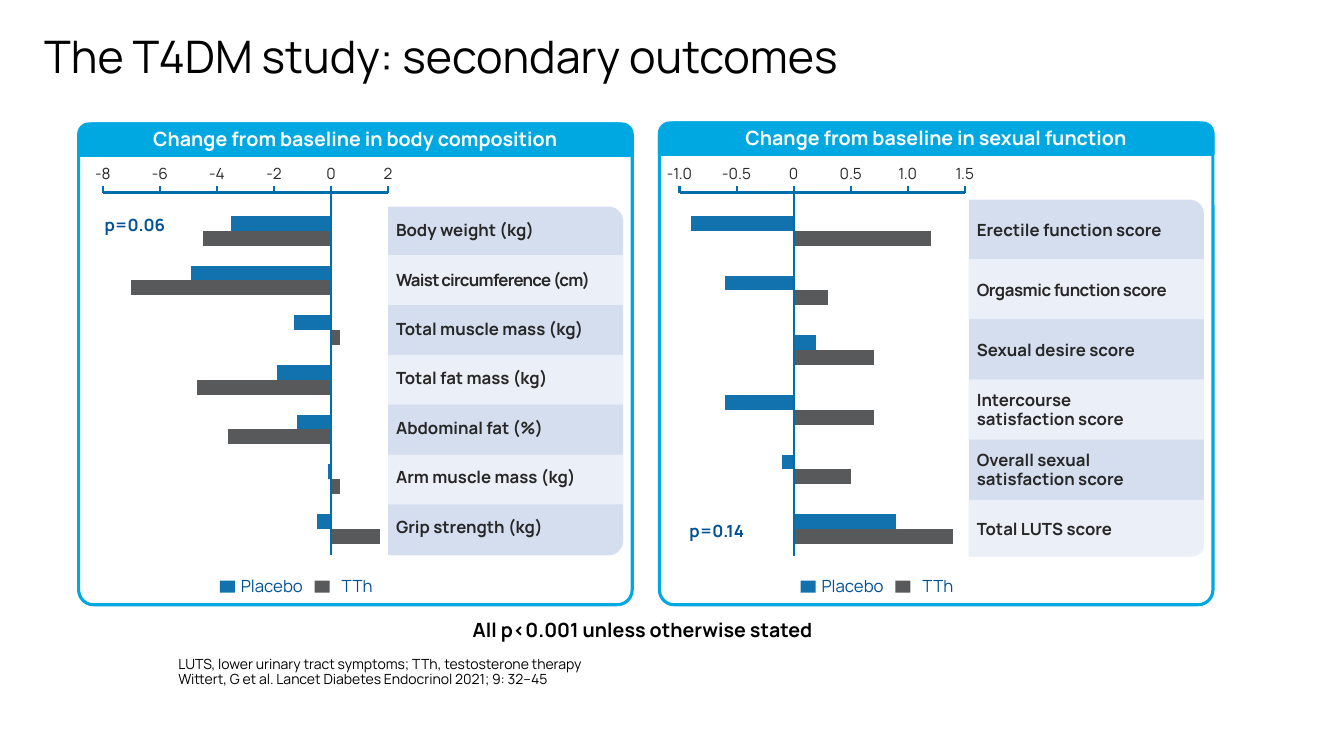
from dataclasses import dataclass

from lxml import etree
from pptx import Presentation
from pptx.chart.data import CategoryChartData
from pptx.dml.color import RGBColor
from pptx.enum.chart import XL_CHART_TYPE
from pptx.enum.shapes import MSO_CONNECTOR, MSO_SHAPE
from pptx.enum.text import MSO_ANCHOR, PP_ALIGN
from pptx.oxml.ns import qn
from pptx.util import Inches, Pt

BARS = XL_CHART_TYPE.BAR_CLUSTERED
STRAIGHT = MSO_CONNECTOR.STRAIGHT
RECTANGLE = MSO_SHAPE.RECTANGLE
ROUNDED = MSO_SHAPE.ROUNDED_RECTANGLE
ONE_ROUND = MSO_SHAPE.ROUND_1_RECTANGLE
TWO_ROUND = MSO_SHAPE.ROUND_2_SAME_RECTANGLE
TOP, MIDDLE, BOTTOM = MSO_ANCHOR.TOP, MSO_ANCHOR.MIDDLE, MSO_ANCHOR.BOTTOM
LEFT, CENTER = PP_ALIGN.LEFT, PP_ALIGN.CENTER

FONT = "Manrope"
COLORS = {
    "black": "000000", "white": "FFFFFF", "frame": "00A8E1", "axis": "006EAB",
    "placebo": "1272AE", "therapy": "58595B", "band": "D5DEEF", "stripe": "EBEFF7",
    "label": "272727", "note": "005294",
}
PANEL_WIDTH, PANEL_BOTTOM, HEADER_HEIGHT = 5.49, 6.0, 0.31
AXIS_WIDTH, AXIS_TOP, TICK_LENGTH = 2.83, 1.91, 0.06
BAND_OFFSET, BAND_WIDTH = 3.07, 2.33
BAR_HEIGHT, FIRST_ROW = 0.1475, 2.29


@dataclass(frozen=True)
class Outcome:
    label: str
    placebo: float
    therapy: float
    tracking: int = 0


@dataclass(frozen=True)
class Panel:
    title: str
    left: float
    top: float
    axis_left: float
    ticks: tuple[str, ...]
    bar_step: float
    band_top: float
    band_bottom: float
    stripe_top: float
    stripe_height: float
    label_step: float
    line_spacing: float
    p_value: str
    p_left: float
    p_top: float
    outcomes: tuple[Outcome, ...]


PANELS = (
    Panel("Change from baseline in sexual function", 6.54, 1.22, 6.74,
          ("-1.0", "-0.5", "0", "0.5", "1.0", "1.5"),
          0.592, 1.98, 5.52, 2.57, 0.597, 0.593, 0.95, "p=0.14", 6.74, 5.12, (
              Outcome("Erectile function score", -0.9, 1.2),
              Outcome("Orgasmic function score", -0.6, 0.3, -30),
              Outcome("Sexual desire score", 0.2, 0.7),
              Outcome("Intercourse\vsatisfaction score", -0.6, 0.7),
              Outcome("Overall sexual\vsatisfaction score", -0.1, 0.5),
              Outcome("Total LUTS score", 0.9, 1.4))),
    Panel("Change from baseline in body composition", 0.78, 1.23, 1.02,
          ("-8", "-6", "-4", "-2", "0", "2"),
          0.493, 2.05, 5.51, 2.53, 0.495, 0.49, 0.99, "p=0.06", 0.94, 2.08, (
              Outcome("Body weight (kg)", -3.5, -4.5),
              Outcome("Waist circumference (cm)", -4.9, -7.0, -50),
              Outcome("Total muscle mass (kg)", -1.3, 0.3),
              Outcome("Total fat mass (kg)", -1.9, -4.7),
              Outcome("Abdominal fat (%)", -1.2, -3.6),
              Outcome("Arm muscle mass (kg)", -0.1, 0.3),
              Outcome("Grip strength (kg)", -0.5, 1.7))),
)


def color(name: str) -> RGBColor:
    return RGBColor.from_string(COLORS[name])


def write(box, lines: list[str], size: float, ink: str, bold=False, align=LEFT,
          anchor=TOP, spacing=1.0, tracking=0, tab=0.0, wrap=True) -> None:
    frame = box.text_frame
    frame.word_wrap = wrap
    frame.vertical_anchor = anchor
    for index, line in enumerate(lines):
        para = frame.add_paragraph() if index else frame.paragraphs[0]
        para.text = line
        para.alignment = align
        para.line_spacing = spacing
        if tab:
            tabs = etree.SubElement(para._p.get_or_add_pPr(), qn("a:tabLst"))
            etree.SubElement(tabs, qn("a:tab"), pos=str(Inches(tab)), algn="l")
        para.font.name, para.font.size, para.font.bold = FONT, Pt(size), bold
        para.font.color.rgb = color(ink)
        if tracking:
            for span in para.runs:
                span._r.get_or_add_rPr().set("spc", str(tracking))


def add_text(page, left: float, top: float, width: float, height: float,
             lines: list[str], size: float, ink: str, **style) -> None:
    box = page.shapes.add_textbox(Inches(left), Inches(top), Inches(width), Inches(height))
    write(box, lines, size, ink, **style)


def add_block(page, kind, left: float, top: float, width: float, height: float,
              fill: str = "", outline: str = "", corners: tuple[float, ...] = ()):
    block = page.shapes.add_shape(kind, Inches(left), Inches(top), Inches(width), Inches(height))
    block.shadow.inherit = False
    if fill:
        block.fill.solid()
        block.fill.fore_color.rgb = color(fill)
    else:
        block.fill.background()
    if outline:
        block.line.color.rgb = color(outline)
        block.line.width = Pt(2.25)
    else:
        block.line.fill.background()
    for index, corner in enumerate(corners):
        block.adjustments[index] = corner
    return block


def add_turned_block(page, kind, left: float, top: float, width: float, height: float,
                     fill: str, corners: tuple[float, ...]) -> None:
    """Fill the given area with a shape turned so its top faces right."""
    shift = (width - height) / 2
    block = add_block(page, kind, left + shift, top - shift, height, width, fill, corners=corners)
    block.rotation = 90


def add_line(page, x1: float, y1: float, x2: float, y2: float) -> None:
    line = page.shapes.add_connector(STRAIGHT, Inches(x1), Inches(y1), Inches(x2), Inches(y2))
    line.line.color.rgb = color("axis")
    line.line.width = Pt(1.5)
    etree.SubElement(line._element.spPr, qn("a:effectLst"))


def add_bars(page, panel: Panel) -> None:
    data = CategoryChartData()
    data.categories = [item.label.replace("\v", " ") for item in panel.outcomes]
    data.add_series("Placebo", [item.placebo for item in panel.outcomes])
    data.add_series("TTh", [item.therapy for item in panel.outcomes])
    chart = page.shapes.add_chart(
        BARS, Inches(panel.axis_left), Inches(FIRST_ROW - panel.bar_step / 2),
        Inches(AXIS_WIDTH), Inches(panel.bar_step * len(panel.outcomes)), data).chart
    chart.has_legend = chart.has_title = False
    chart.font.name, chart.font.size = FONT, Pt(11)
    chart.font.color.rgb = color("label")
    chart.category_axis.reverse_order = True
    chart.category_axis.visible = chart.value_axis.visible = False
    chart.value_axis.has_major_gridlines = False
    chart.value_axis.minimum_scale = float(panel.ticks[0])
    chart.value_axis.maximum_scale = float(panel.ticks[-1])
    plot = chart.plots[0]
    plot.vary_by_categories = False
    plot.overlap = 0
    plot.gap_width = round((panel.bar_step / BAR_HEIGHT - 2) * 100)
    for series, fill in zip(plot.series, ("placebo", "therapy")):
        series.invert_if_negative = False
        series.format.fill.solid()
        series.format.fill.fore_color.rgb = color(fill)
    # Let the plot fill the whole chart frame
    area = chart._chartSpace.find(".//" + qn("c:plotArea"))
    for old in area.findall(qn("c:layout")):
        area.remove(old)
    layout = etree.Element(qn("c:layout"))
    manual = etree.SubElement(layout, qn("c:manualLayout"))
    for tag, value in (("layoutTarget", "inner"), ("xMode", "edge"), ("yMode", "edge"),
                       ("x", "0"), ("y", "0"), ("w", "1"), ("h", "1")):
        etree.SubElement(manual, qn("c:" + tag), val=value)
    area.insert(0, layout)


def add_panel(page, panel: Panel) -> None:
    # Frame and header
    add_block(page, ROUNDED, panel.left, panel.top, PANEL_WIDTH, PANEL_BOTTOM - panel.top,
              outline="frame", corners=(0.031,))
    header = add_block(page, TWO_ROUND, panel.left, panel.top, PANEL_WIDTH, HEADER_HEIGHT,
                       "frame", "frame", (0.33, 0))
    header.text_frame.margin_top = header.text_frame.margin_bottom = 0
    write(header, [panel.title], 14, "white", bold=True, align=CENTER)

    # Bars, scale and zero line
    add_bars(page, panel)
    add_line(page, panel.axis_left, AXIS_TOP, panel.axis_left + AXIS_WIDTH, AXIS_TOP)
    for index, tick in enumerate(panel.ticks):
        x = panel.axis_left + index * AXIS_WIDTH / (len(panel.ticks) - 1)
        add_line(page, x, AXIS_TOP, x, AXIS_TOP - TICK_LENGTH)
        add_text(page, x - 0.3, 1.57, 0.6, 0.29, [tick], 11, "label",
                 align=CENTER, anchor=MIDDLE, wrap=False)
        if tick == "0":
            add_line(page, x, AXIS_TOP, x, panel.band_bottom)

    # Striped label column
    band_left = panel.left + BAND_OFFSET
    add_turned_block(page, TWO_ROUND, band_left, panel.band_top, BAND_WIDTH,
                     panel.band_bottom - panel.band_top, "band", (0.061, 0))
    for row, item in enumerate(panel.outcomes):
        if row % 2:
            top = panel.stripe_top + (row - 1) * panel.stripe_height
            if row == len(panel.outcomes) - 1:
                add_turned_block(page, ONE_ROUND, band_left, top, BAND_WIDTH,
                                 panel.band_bottom - top, "stripe", (0.2,))
            else:
                add_block(page, RECTANGLE, band_left, top, BAND_WIDTH,
                          panel.stripe_height, "stripe")
        add_text(page, band_left - 0.02, FIRST_ROW + row * panel.label_step - 0.24, 2.33, 0.48,
                 [item.label], 12, "label", bold=True, anchor=MIDDLE,
                 spacing=panel.line_spacing, tracking=item.tracking)

    # Exception and legend
    add_text(page, panel.p_left, panel.p_top, 0.94, 0.3, [panel.p_value], 12, "note", bold=True)
    add_text(page, panel.left + 1.51, 5.66, 2.58, 0.3, ["Placebo\tTTh"], 12, "note", tab=1.0)
    for offset, fill in ((1.4, "placebo"), (2.34, "therapy")):
        add_block(page, RECTANGLE, panel.left + offset, 5.76, 0.15, 0.12, fill)


def main() -> None:
    deck = Presentation()
    deck.slide_width, deck.slide_height = Inches(13.33), Inches(7.5)
    page = deck.slides.add_slide(deck.slide_layouts[6])
    add_text(page, 0.34, 0.13, 9, 0.91, ["The T4DM study: secondary outcomes"], 32, "black",
             anchor=MIDDLE, spacing=0.9)
    for panel in PANELS:
        add_panel(page, panel)
    add_text(page, 3.72, 6.08, 5.31, 0.34, ["All p<0.001 unless otherwise stated"], 14, "black",
             bold=True, align=CENTER)
    add_text(page, 1.67, 6.47, 10, 0.4,
             ["LUTS, lower urinary tract symptoms; TTh, testosterone therapy",
              "Wittert, G et al. Lancet Diabetes Endocrinol 2021; 9: 32–45"],
             10, "black", anchor=BOTTOM, spacing=0.9)
    deck.save("out.pptx")


if __name__ == "__main__":
    main()
